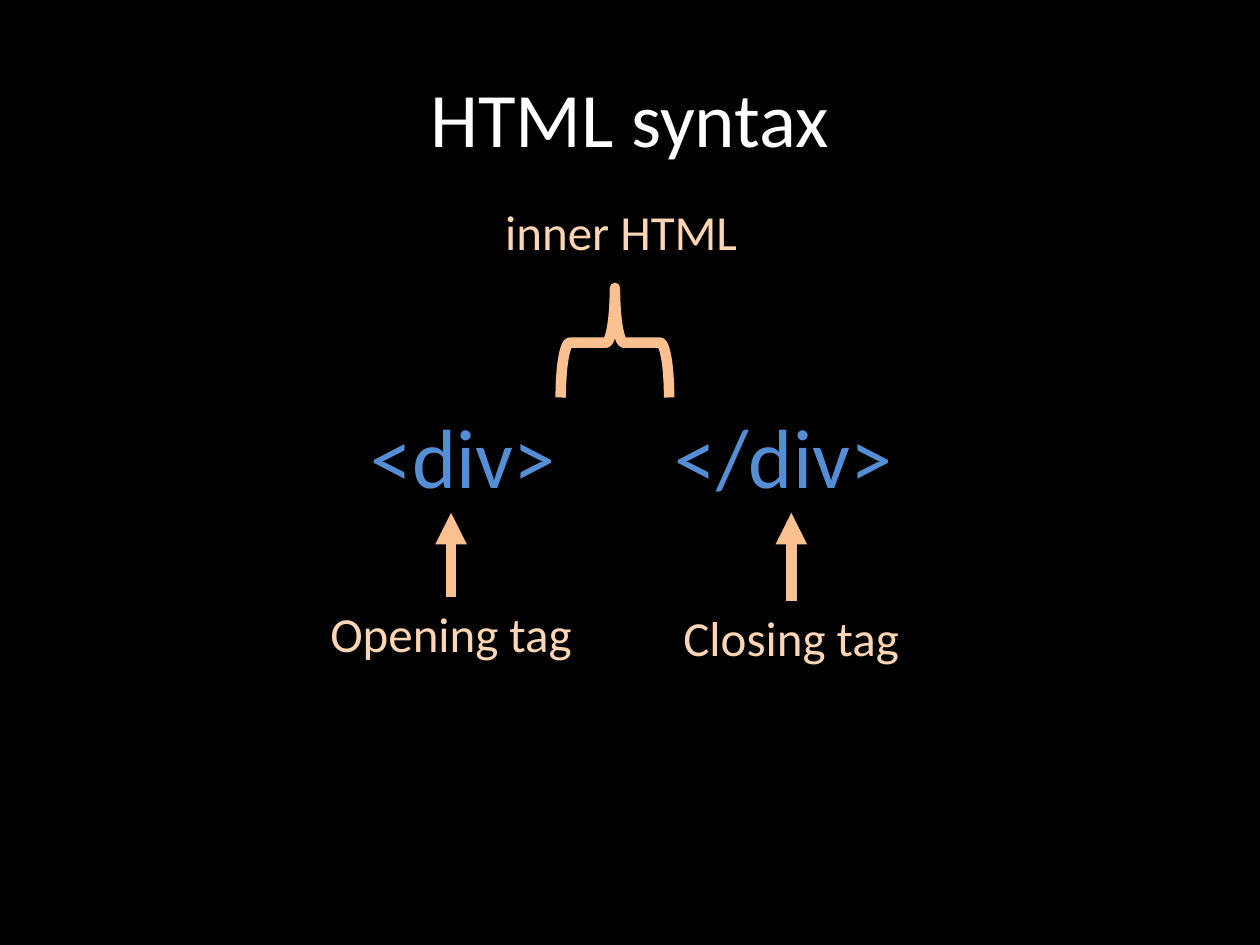
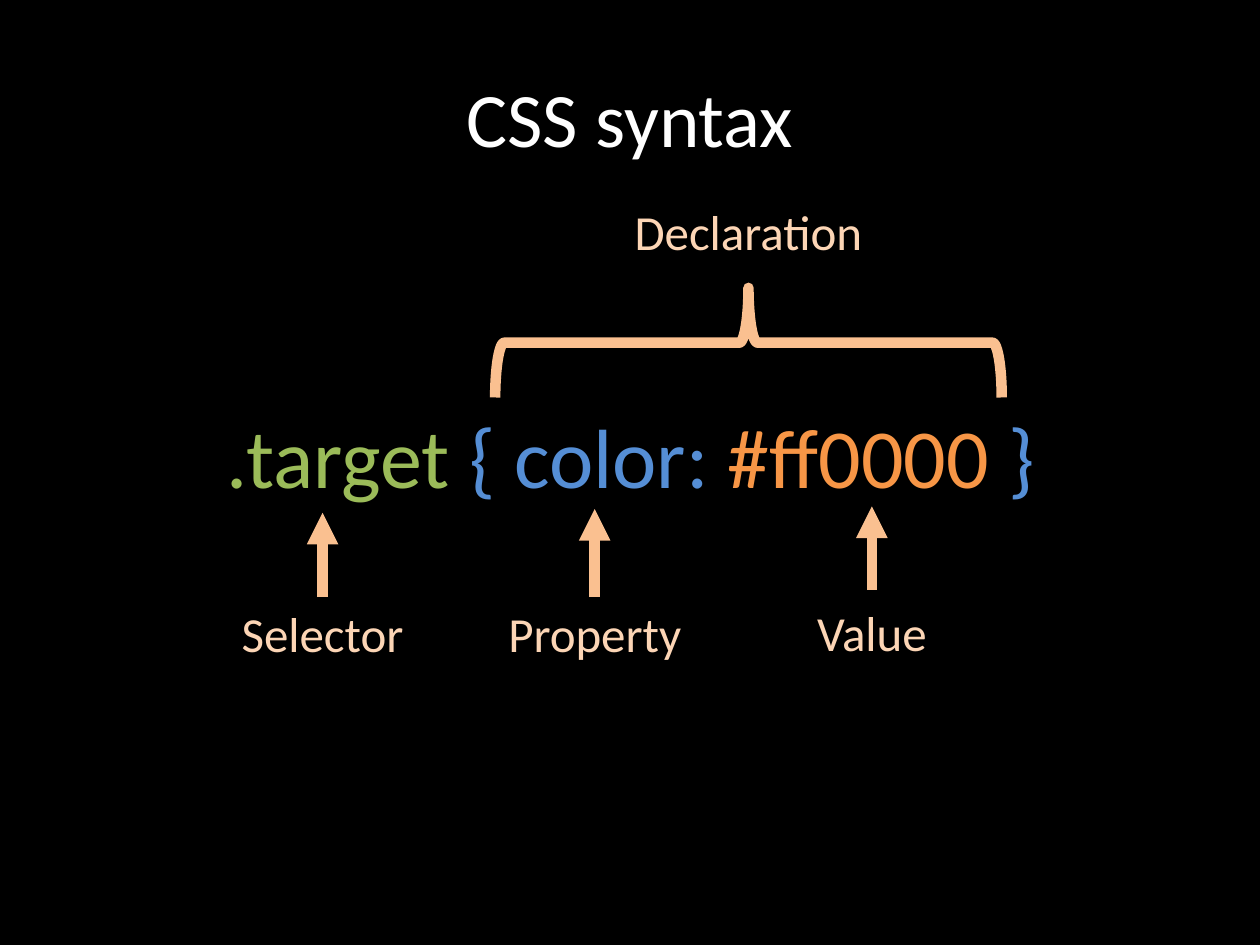
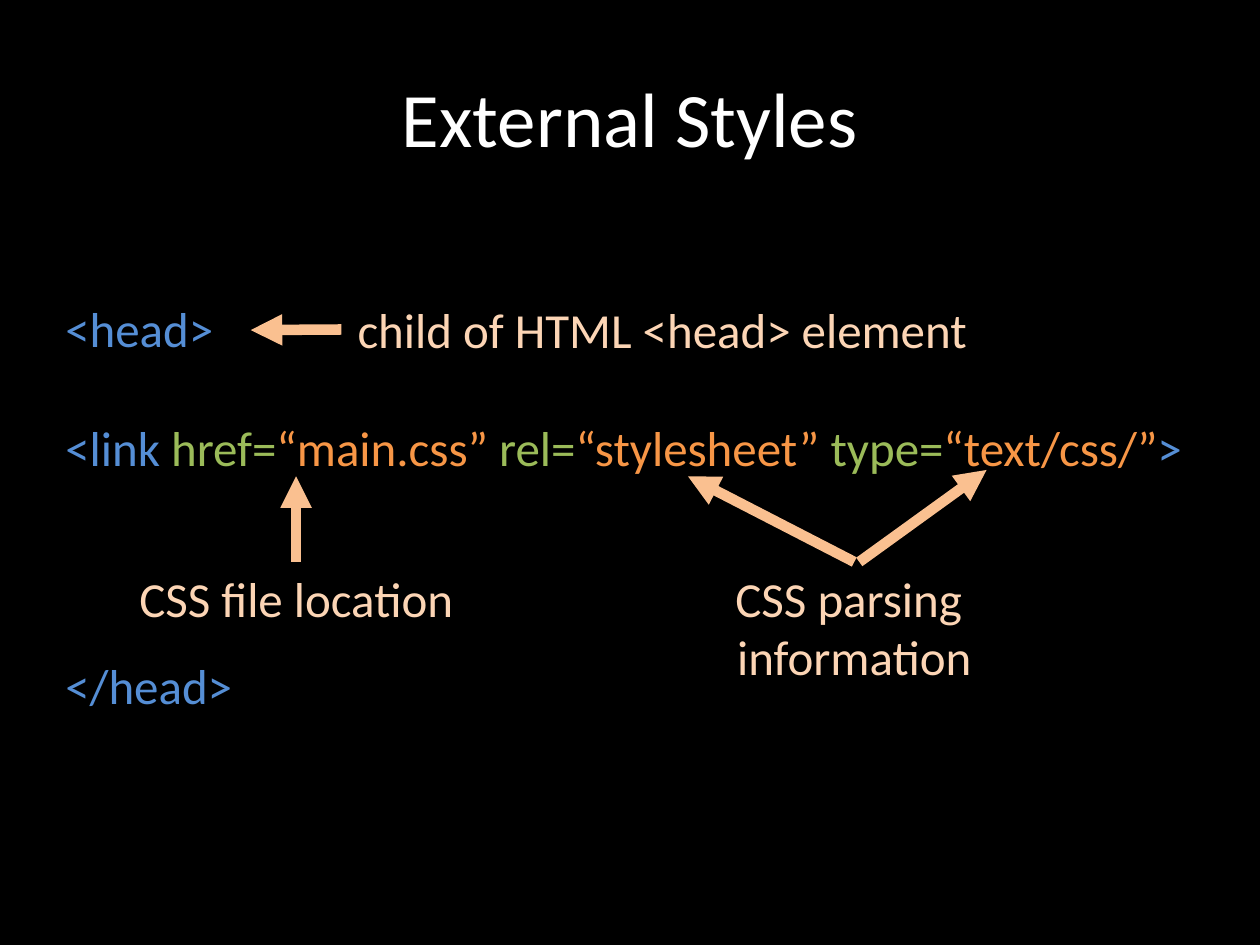
import pptx
import pptx.dml.color
import pptx.enum.shapes
import pptx.enum.text
import pptx.oxml
import pptx.util
from pptx.dml.color import RGBColor
from pptx.enum.text import MSO_ANCHOR, MSO_AUTO_SIZE, PP_ALIGN
from pptx.util import Inches

BLACK = RGBColor(0x00, 0x00, 0x00)
WHITE = RGBColor(0xFF, 0xFF, 0xFF)
BLUE = RGBColor(0x55, 0x8E, 0xD5)
GREEN = RGBColor(0x9B, 0xBB, 0x59)
ORANGE = RGBColor(0xF7, 0x96, 0x46)
PEACH = RGBColor(0xFA, 0xC0, 0x90)
PALE_PEACH = RGBColor(0xFC, 0xD5, 0xB5)

FONT = "Calibri"
TITLE_SIZE, CODE_SIZE, LABEL_SIZE = 44, 48, 28
LINE_PITCH = LABEL_SIZE * 1.22
LABEL_HEIGHT = 0.57
TOP, LEFT = 0, 1


def add_text(page, bounds, lines, size, align=PP_ALIGN.CENTER):
    box = page.shapes.add_textbox(*[Inches(value) for value in bounds])
    frame = box.text_frame
    frame.word_wrap = False
    frame.auto_size = MSO_AUTO_SIZE.SHAPE_TO_FIT_TEXT
    for index, line in enumerate(lines):
        para = frame.paragraphs[0] if index == 0 else frame.add_paragraph()
        para.alignment = align
        for text, color in line:
            span = para.add_run()
            span.text = text
            span.font.name = FONT
            span.font.size = pptx.util.Pt(size)
            span.font.color.rgb = color
    return box


def add_arrow(page, start, tip, label=None, side=TOP):
    arrow = page.shapes.add_connector(
        pptx.enum.shapes.MSO_CONNECTOR.STRAIGHT,
        *[Inches(value) for value in (*start, *tip)])
    if label is not None:
        arrow.begin_connect(label, side)
    arrow.line.color.rgb = PEACH
    arrow.line.width = pptx.util.Pt(6)
    line = arrow.line._get_or_add_ln()
    line.append(pptx.oxml.parse_xml(
        '<a:tailEnd xmlns:a="http://schemas.openxmlformats.org/drawingml/2006/main" type="triangle"/>'))
    line.addnext(pptx.oxml.parse_xml(
        '<a:effectLst xmlns:a="http://schemas.openxmlformats.org/drawingml/2006/main"/>'))


deck = pptx.Presentation()
deck.slide_width, deck.slide_height = Inches(10), Inches(7.5)
background = deck.slide_master.background.fill
background.solid()
background.fore_color.rgb = BLACK

pages = []
for title in ("HTML syntax", "CSS syntax", "External Styles"):
    page = deck.slides.add_slide(deck.slide_layouts[6])
    box = add_text(page, (0.5, 0.3, 9, 1.25), [[(title, WHITE)]], TITLE_SIZE)
    box.text_frame.auto_size = MSO_AUTO_SIZE.NONE
    box.text_frame.vertical_anchor = MSO_ANCHOR.MIDDLE
    pages.append(page)
html_page, css_page, styles_page = pages

add_text(html_page, (2.84, 3.16, 1.7, 0.91), [[("<div>", BLUE)]], CODE_SIZE, PP_ALIGN.LEFT)
add_text(html_page, (5.22, 3.16, 1.96, 0.91), [[("</div>", BLUE)]], CODE_SIZE, PP_ALIGN.RIGHT)
add_text(css_page, (1.66, 3.16, 6.69, 0.91), [[
    (".target ", GREEN), ("{ color: ", BLUE), ("#ff0000 ", ORANGE), ("}", BLUE)]], CODE_SIZE)

for page, text, center, label_width, span_width in (
    (html_page, "inner HTML", 4.93, 2.06, 0.86),
    (css_page, "Declaration", 5.94, 2.03, 4.02),
):
    add_text(page, (center - label_width / 2, 1.55, label_width, LABEL_HEIGHT),
             [[(text, PALE_PEACH)]], LABEL_SIZE)
    brace_center = 4.88 if page is html_page else center
    brace = page.shapes.add_shape(
        pptx.enum.shapes.MSO_SHAPE.LEFT_BRACE,
        Inches(brace_center - 0.87 / 2), Inches(2.72 - span_width / 2),
        Inches(0.87), Inches(span_width))
    brace.rotation = 90
    brace.shadow.inherit = False
    brace.fill.background()
    brace.line.color.rgb = PEACH
    brace.line.width = pptx.util.Pt(6)

for page, text, center, top, width, tip, joined in (
    (html_page, "Opening tag", 3.58, 4.74, 2.14, 4.07, True),
    (html_page, "Closing tag", 6.28, 4.77, 1.94, 4.07, True),
    (css_page, "Selector", 2.56, 4.74, 1.5, 4.07, True),
    (css_page, "Property", 4.72, 4.74, 1.59, 4.04, True),
    (css_page, "Value", 6.92, 4.73, 1.08, 4.02, False),
    (styles_page, "CSS file location", 2.35, 4.46, 2.72, 3.78, True),
):
    label = add_text(page, (center - width / 2, top, width, LABEL_HEIGHT),
                     [[(text, PALE_PEACH)]], LABEL_SIZE)
    add_arrow(page, (center, tip + 0.66), (center, tip), label if joined else None)

code = add_text(styles_page, (0.42, 2.32, 9.24, 3.4), [
    [("<head>", BLUE)],
    [("<link ", BLUE), ("href=", GREEN), ("“main.css” ", ORANGE),
     ("rel=", GREEN), ("“stylesheet” ", ORANGE),
     ("type=", GREEN), ("“text/css/”", ORANGE), (">", BLUE)],
    [("</head>", BLUE)],
], LABEL_SIZE, PP_ALIGN.LEFT)
for para, skipped_lines in zip(code.text_frame.paragraphs, (0, 1, 3)):
    para.space_before = pptx.util.Pt(skipped_lines * LINE_PITCH)

parsing = add_text(styles_page, (5.73, 4.46, 2.1, 1.04),
                   [[("CSS parsing ", PALE_PEACH)], [("information", PALE_PEACH)]], LABEL_SIZE)
add_arrow(styles_page, (6.78, 4.44), (5.46, 3.78), parsing)
add_arrow(styles_page, (6.82, 4.46), (7.83, 3.73))

child = add_text(styles_page, (2.71, 2.33, 5.09, LABEL_HEIGHT),
                 [[("child of HTML <head> element", PALE_PEACH)]], LABEL_SIZE)
add_arrow(styles_page, (2.71, 2.62), (1.99, 2.62), child, LEFT)

deck.save("out.pptx")
